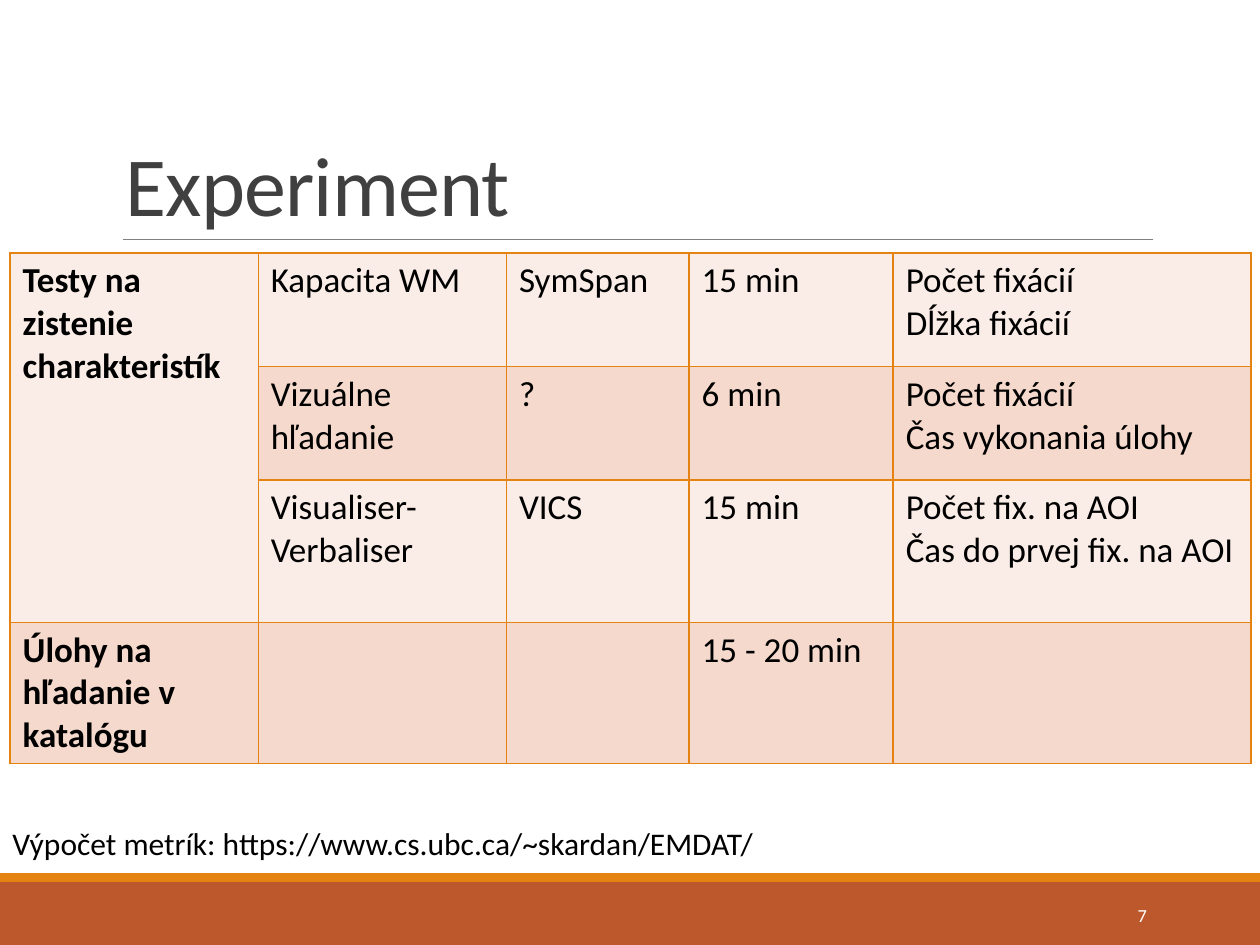
from pptx import Presentation
from pptx.dml.color import RGBColor
from pptx.enum.shapes import MSO_CONNECTOR, MSO_SHAPE
from pptx.enum.text import MSO_ANCHOR, PP_ALIGN
from pptx.oxml.ns import qn
from pptx.util import Inches, Pt
from lxml.etree import SubElement, Element

COLORS = {
    "footer": "BD582C",
    "accent": "E48312",
    "rule": "808080",
    "title": "404040",
    "text": "000000",
    "white": "FFFFFF",
    "band_light": "FAEDE7",
    "band_dark": "F5D9CC",
}


def rgb(name):
    return RGBColor.from_string(COLORS[name])


class SlideBuilder:
    font_name = "Calibri"

    def __init__(self, slide):
        self.slide = slide

    def bar(self, left, top, width, height, color):
        shape = self.slide.shapes.add_shape(
            MSO_SHAPE.RECTANGLE, Inches(left), Inches(top), Inches(width), Inches(height))
        shape.shadow.inherit = False
        shape.fill.solid()
        shape.fill.fore_color.rgb = rgb(color)
        shape.line.fill.background()

    def rule(self, start_x, end_x, y, color, width):
        connector = self.slide.shapes.add_connector(
            MSO_CONNECTOR.STRAIGHT, Inches(start_x), Inches(y), Inches(end_x), Inches(y))
        connector.line.color.rgb = rgb(color)
        connector.line.width = Pt(width)
        SubElement(connector._element.spPr, qn("a:effectLst"))

    def add_lines(self, text_frame, lines, size, color="text", bold=False,
                  align=PP_ALIGN.LEFT, line_spacing=None, tracking=None):
        for index, line in enumerate(lines):
            paragraph = text_frame.paragraphs[0] if index == 0 else text_frame.add_paragraph()
            paragraph.alignment = align
            if line_spacing:
                paragraph.line_spacing = line_spacing
            run = paragraph.add_run()
            run.text = line
            run.font.name = self.font_name
            run.font.size = Pt(size)
            run.font.bold = bold
            run.font.color.rgb = rgb(color)
            if tracking:
                run._r.get_or_add_rPr().set("spc", str(int(tracking * 100)))

    def text(self, left, top, width, height, line, size, anchor=MSO_ANCHOR.TOP, **style):
        box = self.slide.shapes.add_textbox(
            Inches(left), Inches(top), Inches(width), Inches(height))
        box.text_frame.word_wrap = True
        box.text_frame.vertical_anchor = anchor
        self.add_lines(box.text_frame, [line], size, **style)

    def border(self, cell, color, width):
        properties = cell._tc.get_or_add_tcPr()
        for index, side in enumerate(("a:lnL", "a:lnR", "a:lnT", "a:lnB")):
            line = Element(qn(side), w=str(Pt(width)))
            fill = SubElement(line, qn("a:solidFill"))
            SubElement(fill, qn("a:srgbClr"), val=COLORS[color])
            properties.insert(index, line)

    def table(self, left, top, column_widths, row_heights, rows, size):
        table = self.slide.shapes.add_table(
            len(rows), len(column_widths), Inches(left), Inches(top),
            Inches(sum(column_widths)), Inches(sum(row_heights))).table
        table.first_row = False
        table.horz_banding = False
        for column, width in zip(table.columns, column_widths):
            column.width = Inches(width)
        for row, height in zip(table.rows, row_heights):
            row.height = Inches(height)
        for row_index, row in enumerate(rows):
            for column_index, lines in enumerate(row):
                cell = table.cell(row_index, column_index)
                cell.fill.solid()
                cell.fill.fore_color.rgb = rgb("band_dark" if row_index % 2 else "band_light")
                self.border(cell, "accent", 1)
                self.add_lines(cell.text_frame, lines, size, bold=column_index == 0)
        return table


def main():
    presentation = Presentation()
    presentation.slide_width = Inches(10)
    presentation.slide_height = Inches(7.5)
    builder = SlideBuilder(presentation.slides.add_slide(presentation.slide_layouts[6]))

    # Footer bars and title rule
    builder.bar(0, 7, 10, 0.5, "footer")
    builder.bar(0, 6.93, 10, 0.07, "accent")
    builder.rule(0.98, 9.15, 1.9, "rule", 0.5)

    # Title and slide number
    builder.text(0.9, 0.31, 8.25, 1.59, "Experiment", 48, MSO_ANCHOR.BOTTOM,
                 color="title", line_spacing=0.85, tracking=-0.5)
    builder.text(8.12, 7.06, 1.08, 0.4, "7", 10.5, MSO_ANCHOR.MIDDLE,
                 color="white", align=PP_ALIGN.RIGHT)

    # Test overview; the first column spans the three tests
    rows = [
        [["Testy na zistenie charakteristík"], ["Kapacita WM"], ["SymSpan"], ["15 min"],
         ["Počet fixácií", "Dĺžka fixácií"]],
        [[], ["Vizuálne hľadanie"], ["?"], ["6 min"],
         ["Počet fixácií", "Čas vykonania úlohy"]],
        [[], ["Visualiser-", "Verbaliser"], ["VICS"], ["15 min"],
         ["Počet fix. na AOI", "Čas do prvej fix. na AOI"]],
        [["Úlohy na hľadanie v katalógu"], [], [], ["15 - 20 min"], []],
    ]
    table = builder.table(0.08, 2.01, [1.97, 1.97, 1.45, 1.62, 2.84],
                          [0.9, 0.9, 1.13, 1.12], rows, 20)
    table.cell(0, 0).merge(table.cell(2, 0))

    # Source of the metrics
    builder.text(0, 6.49, 6.41, 0.4,
                 "Výpočet metrík: https://www.cs.ubc.ca/~skardan/EMDAT/", 18)

    presentation.save("out.pptx")


if __name__ == "__main__":
    main()
